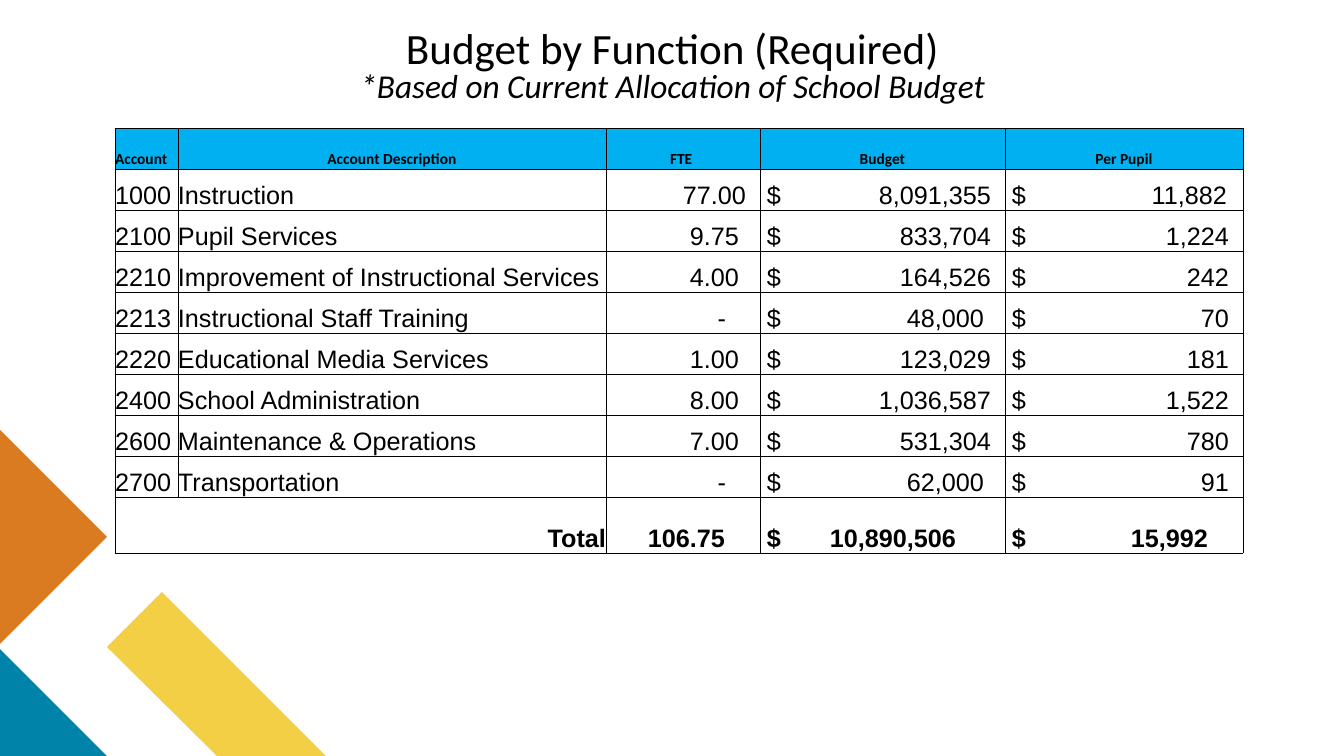
from lxml import etree
from pptx import Presentation, util as u
from pptx.dml.color import RGBColor
from pptx.enum import text
from pptx.oxml.ns import qn

# Content
TITLE = "Budget by Function (Required)"
SUBTITLE = "*Based on Current Allocation of School Budget"
HEADERS = ["Account", "Account Description", "FTE ", " Budget ", " Per Pupil "]
ROWS = [
    ("1000", "Instruction", "77.00", "8,091,355", "11,882"),
    ("2100", "Pupil Services", "9.75", "833,704", "1,224"),
    ("2210", "Improvement of Instructional Services", "4.00", "164,526", "242"),
    ("2213", "Instructional Staff Training", "-", "48,000", "70"),
    ("2220", "Educational Media Services", "1.00", "123,029", "181"),
    ("2400", "School Administration", "8.00", "1,036,587", "1,522"),
    ("2600", "Maintenance & Operations", "7.00", "531,304", "780"),
    ("2700", "Transportation", "-", "62,000", "91"),
    ("Total", "", "106.75", "10,890,506", "15,992"),
]
DECORATIONS = [
    ("F3CF45", [(326, 756), (217, 756), (107, 647), (162, 592)]),
    ("0083A9", [(107, 756), (0, 756), (0, 649)]),
    ("DA7B22", [(0, 430), (107, 537), (0, 644)]),
]

# Layout in px
SCALE = 12192000 / 1344
COLUMN_EDGES = [115, 178, 606, 760, 1005, 1243]
TABLE_TOP, ROW_HEIGHT, TOTAL_HEIGHT = 128, 41, 56
DOLLAR_INDENT = 7
NUMBER_RIGHT = {2: 739, 3: 991, 4: 1229}
NUMBER_RIGHT_SPECIAL = {"77.00": 746, "-": 726, "48,000": 984, "62,000": 984,
                        "11,882": 1227, "106.75": 725, "10,890,506": 956,
                        "15,992": 1208}
LEFT, CENTER, RIGHT = (text.PP_ALIGN.LEFT, text.PP_ALIGN.CENTER,
                       text.PP_ALIGN.RIGHT)


def px(length):
    return u.Emu(round(length * SCALE))


def color(value):
    return RGBColor.from_string(value)


def write(paragraph, content, size=18, font="Arial", bold=False, italic=False,
          align=LEFT, spacing=None, tab=None):
    paragraph.alignment = align
    if spacing:
        paragraph.line_spacing = spacing
    if tab:
        tabs = etree.SubElement(paragraph._p.get_or_add_pPr(), qn("a:tabLst"))
        etree.SubElement(tabs, qn("a:tab"), pos=str(px(tab)), algn="r")
    run = paragraph.add_run()
    run.text = content
    run.font.size, run.font.name = u.Pt(size), font
    run.font.bold, run.font.italic = bold, italic
    run.font.color.rgb = color("000000")


def format_cell(cell, fill, left=0, right=0):
    cell.margin_top = cell.margin_bottom = 0
    cell.margin_left, cell.margin_right = px(left), px(right)
    cell.vertical_anchor = text.MSO_ANCHOR.BOTTOM
    properties = cell._tc.get_or_add_tcPr()
    for side in ("lnL", "lnR", "lnT", "lnB"):
        line = etree.SubElement(properties, qn("a:" + side), w=str(u.Pt(0.5)))
        solid = etree.SubElement(line, qn("a:solidFill"))
        etree.SubElement(solid, qn("a:srgbClr"), val="000000")
    if fill:
        cell.fill.solid()
        cell.fill.fore_color.rgb = color(fill)
    else:
        cell.fill.background()


presentation = Presentation()
presentation.slide_width, presentation.slide_height = px(1344), px(756)
slide = presentation.slides.add_slide(presentation.slide_layouts[6])

# Corner decorations
for fill, points in DECORATIONS:
    builder = slide.shapes.build_freeform(*points[0], scale=SCALE)
    builder.add_line_segments(points[1:], close=True)
    shape = builder.convert_to_shape()
    shape.shadow.inherit = False
    shape.fill.solid()
    shape.fill.fore_color.rgb = color(fill)
    shape.line.fill.background()

# Title
frame = slide.shapes.add_textbox(px(219), px(23), px(907), px(90)).text_frame
frame.word_wrap = True
frame.vertical_anchor = text.MSO_ANCHOR.MIDDLE
write(frame.paragraphs[0], TITLE, size=30.8, font="Calibri", align=CENTER,
      spacing=0.8)
write(frame.add_paragraph(), SUBTITLE, size=23.8, font="Calibri", italic=True,
      align=CENTER, spacing=0.8)

# Table grid
row_heights = [ROW_HEIGHT] * len(ROWS) + [TOTAL_HEIGHT]
table = slide.shapes.add_table(
    len(row_heights), len(HEADERS), px(COLUMN_EDGES[0]), px(TABLE_TOP),
    px(COLUMN_EDGES[-1] - COLUMN_EDGES[0]), px(sum(row_heights))).table
table.first_row = table.horz_banding = False
for column, start, end in zip(table.columns, COLUMN_EDGES, COLUMN_EDGES[1:]):
    column.width = px(end - start)
for row, height in zip(table.rows, row_heights):
    row.height = px(height)

# Header row
for index, header in enumerate(HEADERS):
    cell = table.cell(0, index)
    format_cell(cell, "00B0F0")
    write(cell.text_frame.paragraphs[0], header, size=11, font="Calibri",
          bold=True, align=CENTER if index else LEFT)

# Account rows and total
for row_index, values in enumerate(ROWS, start=1):
    is_total = values[0] == "Total"
    for index, value in enumerate(values):
        cell = table.cell(row_index, index)
        paragraph = cell.text_frame.paragraphs[0]
        number_right = NUMBER_RIGHT_SPECIAL.get(value, NUMBER_RIGHT.get(index))
        if index > 2:
            format_cell(cell, None, left=DOLLAR_INDENT)
            write(paragraph, "$\t" + value, bold=is_total,
                  tab=number_right - COLUMN_EDGES[index] - DOLLAR_INDENT)
        elif index == 2:
            format_cell(cell, "FFFFFF", right=COLUMN_EDGES[3] - number_right)
            write(paragraph, value, bold=is_total, align=RIGHT)
        else:
            format_cell(cell, "FFFFFF")
            if value:
                write(paragraph, value, bold=is_total,
                      align=RIGHT if is_total else LEFT)
table.cell(len(ROWS), 0).merge(table.cell(len(ROWS), 1))

presentation.save("out.pptx")
